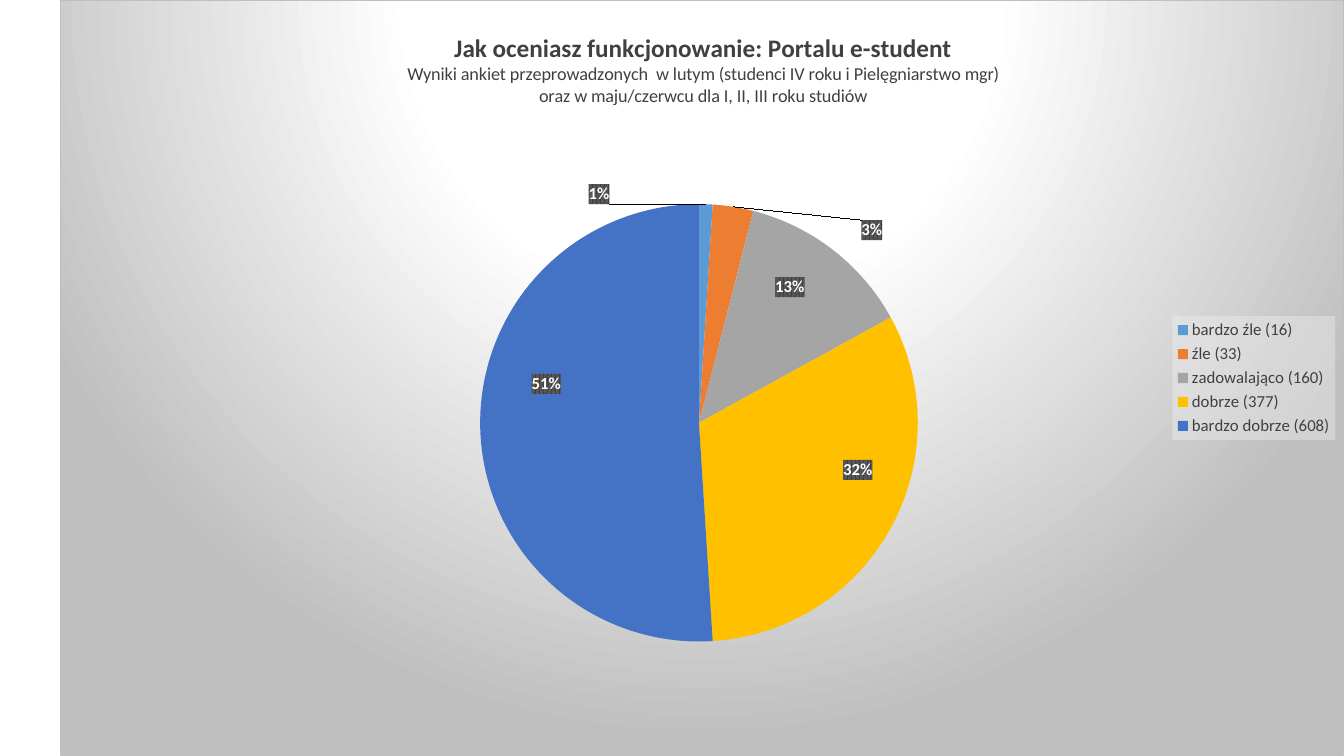
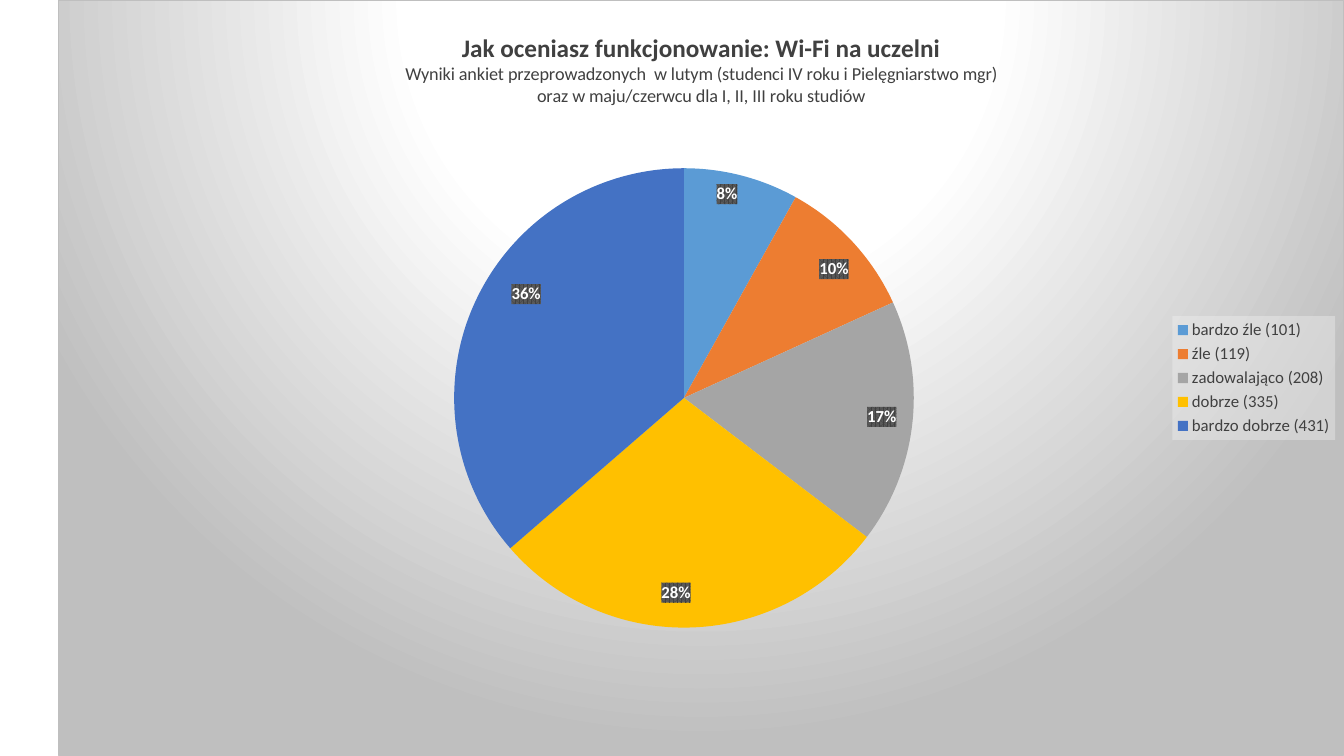
from math import cos, pi, sin
from pptx import Presentation
from pptx import util as u
from pptx.chart import data as cd
from pptx.dml import color as dc
from pptx.enum import chart as ce
from pptx.enum import text as te
from pptx.oxml import parse_xml

WIDE, HIGH = 1344, 756
PX = 914400 / 100.8
NS = ('xmlns:c="http://schemas.openxmlformats.org/drawingml/2006/chart" '
      'xmlns:a="http://schemas.openxmlformats.org/drawingml/2006/main"')
HUE = {"white": "FFFFFF", "edge": "BFBFBF", "ink": "404040", "slate": "595959",
       "pale": "F2F2F2"}
RATES = {"bardzo źle": "5B9BD5", "źle": "ED7D31", "zadowalająco": "A5A5A5",
         "dobrze": "FFC000", "bardzo dobrze": "4472C4"}
SUBS = ["Wyniki ankiet przeprowadzonych  w lutym (studenci IV roku i Pielęgniarstwo mgr)",
        "oraz w maju/czerwcu dla I, II, III roku studiów"]
HEAD = {"size": u.Pt(18), "bold": True, "name": "Calibri"}
SUB = {"size": u.Pt(13), "bold": False, "name": "Calibri"}
KEY = {"size": u.Pt(12), "bold": False, "name": "Calibri"}

PAGES = [
    {"head": "Jak oceniasz funkcjonowanie: Portalu e-student", "left": 60,
     "votes": [16, 33, 160, 377, 608], "vals": [1, 3, 13, 32, 51],
     "pie": (480, 204, 438),
     "tags": [(599, 194), (872, 230), (790, 287), (858, 470), (546, 384)]},
    {"head": "Jak oceniasz funkcjonowanie: Wi-Fi na uczelni", "left": 58,
     "votes": [101, 119, 208, 335, 431], "vals": [8, 10, 17, 28, 36],
     "pie": (454, 168, 460),
     "tags": [(727, 194), (834, 269), (882, 417), (676, 593), (526, 294)]},
]

BACK = f'''<c:spPr {NS}><a:gradFill><a:gsLst>
<a:gs pos="0"><a:srgbClr val="{HUE["white"]}"/></a:gs>
<a:gs pos="39000"><a:srgbClr val="{HUE["white"]}"/></a:gs>
<a:gs pos="100000"><a:srgbClr val="{HUE["edge"]}"/></a:gs></a:gsLst>
<a:path path="circle"><a:fillToRect l="50000" t="-80000" r="50000" b="180000"/></a:path>
</a:gradFill><a:ln w="9525"><a:solidFill><a:srgbClr val="{HUE["edge"]}"/></a:solidFill></a:ln>
</c:spPr>'''
PANE = f'''<c:spPr {NS}><a:solidFill><a:srgbClr val="{HUE["pale"]}">
<a:alpha val="39000"/></a:srgbClr></a:solidFill><a:ln><a:noFill/></a:ln></c:spPr>'''
LOOK = f'''<c:spPr><a:pattFill prst="pct75"><a:fgClr><a:srgbClr val="{HUE["ink"]}"/></a:fgClr>
<a:bgClr><a:srgbClr val="{HUE["slate"]}"/></a:bgClr></a:pattFill><a:ln><a:noFill/></a:ln></c:spPr>
<c:txPr><a:bodyPr/><a:p><a:pPr><a:defRPr sz="1200" b="1"><a:solidFill>
<a:srgbClr val="{HUE["white"]}"/></a:solidFill><a:latin typeface="Calibri"/></a:defRPr></a:pPr>
<a:endParaRPr lang="pl-PL"/></a:p></c:txPr><c:dLblPos val="ctr"/>
<c:showLegendKey val="0"/><c:showVal val="0"/><c:showCatName val="0"/><c:showSerName val="0"/>
<c:showPercent val="1"/><c:showBubbleSize val="0"/>'''


def layout(vals, mode=""):
    body = "".join(f'<c:{k} val="{v:.4f}"/>' for k, v in vals.items())
    return f"<c:layout {NS}><c:manualLayout>{mode}{body}</c:manualLayout></c:layout>"


def style(font, form, hue):
    for key, val in form.items():
        setattr(font, key, val)
    font.color.rgb = dc.RGBColor.from_string(hue)


EDGE = '<c:xMode val="edge"/><c:yMode val="edge"/>'
deck = Presentation()
deck.slide_width, deck.slide_height = u.Inches(13.333), u.Inches(7.5)

for page in PAGES:
    left, vals = page["left"], page["vals"]
    span = WIDE - left
    data = cd.CategoryChartData()
    data.categories = [f"{name} ({n})" for name, n in zip(RATES, page["votes"])]
    data.add_series("Series 1", vals)
    slide = deck.slides.add_slide(deck.slide_layouts[6])
    box = [round(n * PX) for n in (left, 0, span, HIGH)]
    chart = slide.shapes.add_chart(ce.XL_CHART_TYPE.PIE, *box, data).chart
    root = chart.element
    chart.font.size, chart.font.name = u.Pt(10), "Calibri"
    root.xpath("c:chart")[0].addnext(parse_xml(BACK))

    frame = chart.chart_title.text_frame
    for i, line in enumerate([page["head"], *SUBS]):
        para = frame.add_paragraph() if i else frame.paragraphs[0]
        para.alignment = te.PP_ALIGN.CENTER
        run = para.add_run()
        run.text = line
        style(run.font, SUB if i else HEAD, HUE["ink"])
    chart.chart_title.include_in_layout = False
    for old in root.xpath("c:chart/c:title/c:layout | c:chart/c:plotArea/c:layout"):
        old.getparent().remove(old)
    spot = {"x": 344 / span, "y": 28 / HIGH}
    root.xpath("c:chart/c:title/c:tx")[0].addnext(parse_xml(layout(spot, EDGE)))

    x, y, size = page["pie"]
    area = {"x": (x - left) / span, "y": y / HIGH, "w": size / span, "h": size / HIGH}
    inner = '<c:layoutTarget val="inner"/>' + EDGE
    root.xpath("c:chart/c:plotArea")[0].insert(0, parse_xml(layout(area, inner)))

    chart.has_legend = True
    chart.legend.position = ce.XL_LEGEND_POSITION.RIGHT
    chart.legend.include_in_layout = False
    style(chart.legend.font, KEY, HUE["ink"])
    root.xpath("c:chart/c:legend/c:overlay")[0].addnext(parse_xml(PANE))

    plot = chart.plots[0]
    plot.vary_by_categories = True
    row = plot.series[0]
    tags, done = "", 0
    for i, (val, hue, (tx, ty)) in enumerate(zip(vals, RATES.values(), page["tags"])):
        form = row.points[i].format
        form.fill.solid()
        form.fill.fore_color.rgb = dc.RGBColor.from_string(hue)
        form.line.fill.background()
        turn = 2 * pi * (done + val / 2) / sum(vals)
        done += val
        mid = x + size / 2 + size / 4 * sin(turn), y + size / 2 - size / 4 * cos(turn)
        move = {"x": (tx - mid[0]) / span, "y": (ty - mid[1]) / HIGH}
        tags += f'<c:dLbl><c:idx val="{i}"/>{layout(move)}{LOOK}</c:dLbl>'
    tags = f'<c:dLbls {NS}>{tags}{LOOK}<c:showLeaderLines val="1"/></c:dLbls>'
    root.xpath(".//c:ser/c:cat")[0].addprevious(parse_xml(tags))

deck.save("out.pptx")
